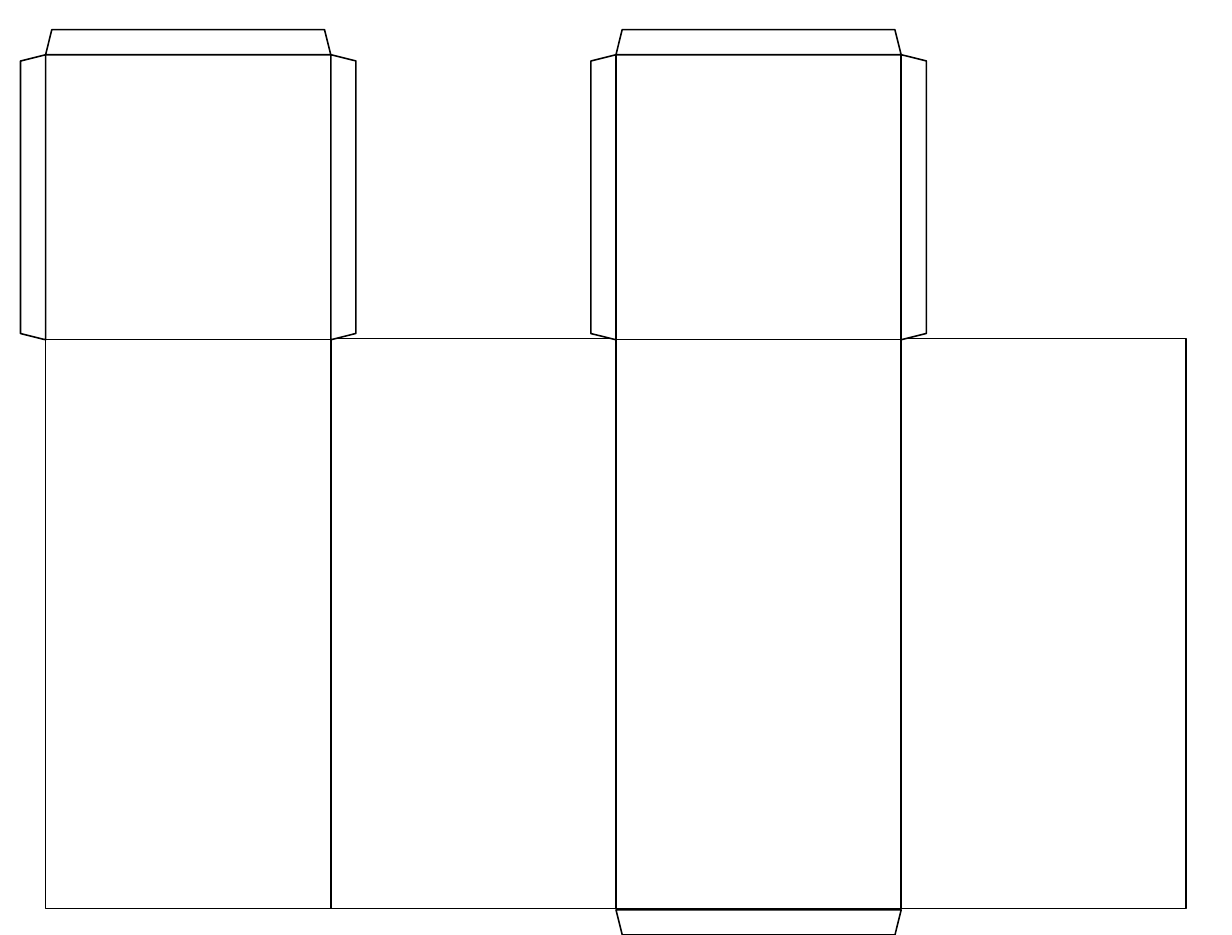
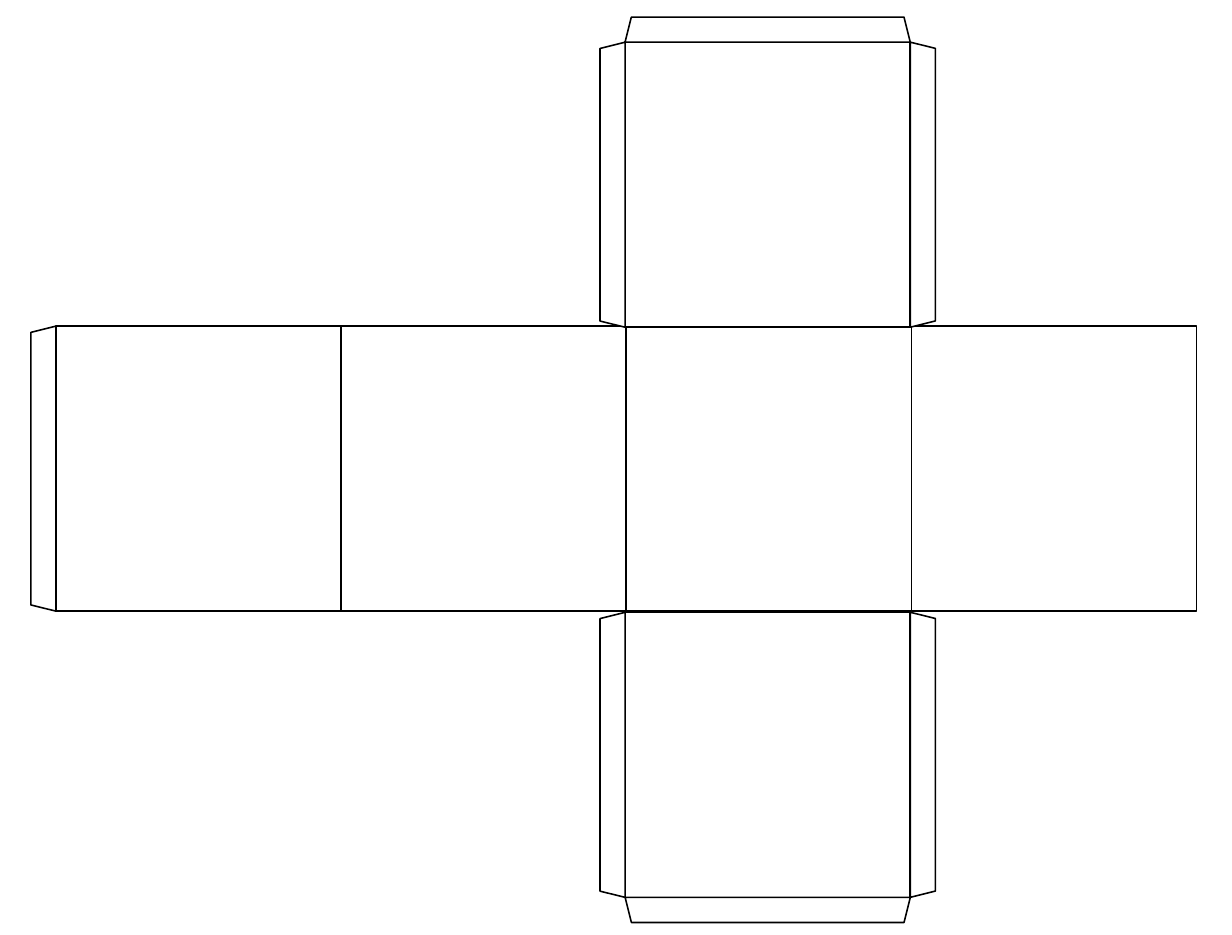
from pptx import Presentation
from pptx.dml.color import RGBColor
from pptx.enum.shapes import MSO_SHAPE
from pptx.util import Emu, Pt

EMU_PER_PX = 9144  # 100 px to the inch
SIDE = 250
FLAP = 22
COLORS = {"paper": "FFFFFF", "ink": "000000"}


def px(n):
    return Emu(n * EMU_PER_PX)


class BoxNet:
    """Draws the unfolded faces and glue flaps of a paper box."""

    def __init__(self):
        self.prs = Presentation()
        self.prs.slide_width, self.prs.slide_height = px(1080), px(820)
        self.s = None

    def slide(self):
        self.s = self.prs.slides.add_slide(self.prs.slide_layouts[6])

    def shape(self, kind, x, y, w, h, rotation=0, group=None):
        shapes = (group or self.s).shapes
        sp = shapes.add_shape(kind, px(x), px(y), px(w), px(h))
        sp.rotation = rotation
        sp.shadow.inherit = False
        sp.fill.solid()
        sp.fill.fore_color.rgb = RGBColor.from_string(COLORS["paper"])
        sp.line.color.rgb = RGBColor.from_string(COLORS["ink"])
        sp.line.width = Pt(1)

    def face(self, x, y, height=SIDE, group=None):
        self.shape(MSO_SHAPE.RECTANGLE, x, y, SIDE, height, group=group)

    def flap(self, edge, x, y, height=SIDE, group=None):
        """Attach a flap to one edge of the face at x, y."""
        across = (SIDE + FLAP) // 2
        middle = y + (height - FLAP) // 2
        left, top, rotation = {
            "top": (x, y - FLAP, 0),
            "right": (x + across, middle, 90),
            "bottom": (x, y + height, 180),
            "left": (x - across, middle, 270),
        }[edge]
        self.shape(MSO_SHAPE.TRAPEZOID, left, top, SIDE, FLAP, rotation, group)

    def row(self, x, y, height=SIDE):
        """Four side faces next to each other."""
        for i in range(4):
            self.face(x + i * SIDE, y, height)

    def lid(self, x, y, outer_edge="top"):
        """A square face with flaps on its three free edges."""
        group = self.s.shapes.add_group_shape()
        self.face(x, y, group=group)
        for edge in ("right", outer_edge, "left"):
            self.flap(edge, x, y, group=group)


def tall_box(net):
    net.slide()
    net.row(40, 297, 2 * SIDE)
    net.lid(540, 48)
    net.flap("bottom", 540, 298, 2 * SIDE)
    net.lid(40, 48)


def cube(net):
    net.slide()
    net.row(49, 286)
    net.lid(548, 37)
    net.lid(548, 537, "bottom")
    net.flap("left", 49, 286)


def main():
    net = BoxNet()
    tall_box(net)
    cube(net)
    net.prs.save("out.pptx")


if __name__ == "__main__":
    main()
